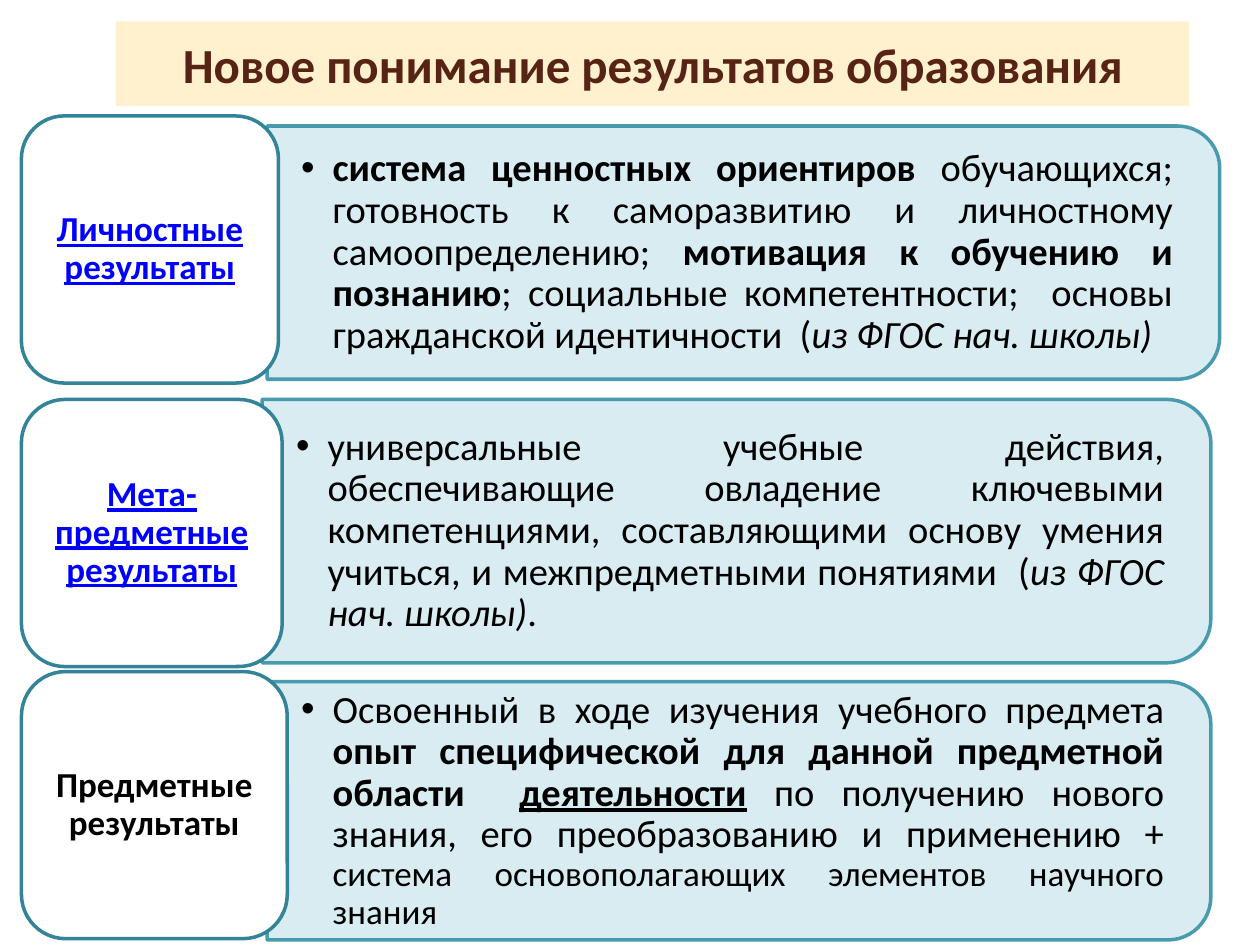
"""Builds a slide that pairs three kinds of learning results with their descriptions."""
from dataclasses import dataclass

from lxml import etree
from pptx import Presentation
from pptx import util as u
from pptx.dml.color import RGBColor
from pptx.enum import shapes, text
from pptx.oxml import ns


@dataclass(frozen=True)
class Theme:
    font: str = "Calibri"
    title_size: int = 28
    body_size: int = 22
    label_size: int = 20
    line_width: int = 2
    title: str = "572314"
    banner: str = "FFF1CE"
    panel: str = "D4EBF1"
    panel_line: str = "3891A7"
    label: str = "FFFFFF"
    label_line: str = "338498"
    ink: str = "000000"
    link: str = "0000FF"


class SlideBuilder:
    columns, rows = 100, 75

    def __init__(self, deck, theme):
        self.deck, self.theme = deck, theme
        self.page = deck.slides.add_slide(deck.slide_layouts[4])
        self.bodies = list(self.page.placeholders)[1:]

    def area(self, left, top, width, height):
        across = self.deck.slide_width / self.columns
        down = self.deck.slide_height / self.rows
        return [u.Emu(round(size * step)) for size, step in
                zip((left, top, width, height), (across, down, across, down))]

    def place(self, box, area):
        box.left, box.top, box.width, box.height = area

    def paint(self, box, fill, line=None):
        box.fill.solid()
        box.fill.fore_color.rgb = RGBColor.from_string(fill)
        if line:
            box.line.color.rgb = RGBColor.from_string(line)
            box.line.width = u.Pt(self.theme.line_width)

    def frame(self, box, side, edge):
        frame = box.text_frame
        frame.word_wrap = True
        frame.auto_size = text.MSO_AUTO_SIZE.NONE
        frame.vertical_anchor = text.MSO_ANCHOR.MIDDLE
        frame.margin_left = frame.margin_right = u.Inches(side)
        frame.margin_top = frame.margin_bottom = u.Inches(edge)
        return frame.paragraphs[0]

    def style(self, para, size, color, bold, align, spacing=0.9):
        para.alignment = align
        para.line_spacing = spacing
        para.space_before = u.Pt(0)
        para.font.name = self.theme.font
        para.font.size = u.Pt(size)
        para.font.bold = bold
        para.font.color.rgb = RGBColor.from_string(color)

    def title(self, words, *area):
        box = self.page.shapes.title
        self.place(box, self.area(*area))
        self.paint(box, self.theme.banner)
        para = self.frame(box, 0.1, 0.05)
        para.text = words
        self.style(para, self.theme.title_size, self.theme.title, True,
                   text.PP_ALIGN.CENTER, 1.0)

    def panel(self, *area):
        left, top, width, height = self.area(*area)
        shift = (width - height) // 2
        box = self.page.shapes.add_shape(
            shapes.MSO_SHAPE.ROUND_2_SAME_RECTANGLE,
            left + shift, top - shift, height, width)
        box.rotation = 90
        box.shadow.inherit = False
        self.paint(box, self.theme.panel, self.theme.panel_line)
        for color in box._element.spPr.iter(ns.qn("a:srgbClr")):
            etree.SubElement(color, ns.qn("a:alpha"), val="90000")

    def bullet(self, spans, *area):
        box = self.bodies.pop(0)
        self.page.shapes._spTree.append(box._element)
        self.place(box, self.area(*area))
        para = self.frame(box, 0.27, 0.14)
        self.style(para, self.theme.body_size, self.theme.ink, False, text.PP_ALIGN.JUSTIFY)
        props = para._p.get_or_add_pPr()
        props.set("marL", str(u.Inches(0.25)))
        props.set("indent", str(-u.Inches(0.25)))
        mark = etree.Element(ns.qn("a:buChar"), char="•")
        props.find(ns.qn("a:defRPr")).addprevious(mark)
        for words, marks in spans:
            span = para.add_run()
            span.text = words
            span.font.bold = "b" in marks
            span.font.italic = "i" in marks
            span.font.underline = "u" in marks
            span.font.name = self.theme.font
            span.font.size = u.Pt(self.theme.label_size if "s" in marks
                                  else self.theme.body_size)
            span.font.color.rgb = RGBColor.from_string(self.theme.ink)

    def label(self, words, linked, *area):
        box = self.page.shapes.add_shape(
            shapes.MSO_SHAPE.ROUNDED_RECTANGLE, *self.area(*area))
        box.shadow.inherit = False
        self.paint(box, self.theme.label, self.theme.label_line)
        para = self.frame(box, 0.08, 0.04)
        para.text = words
        color = self.theme.link if linked else self.theme.ink
        self.style(para, self.theme.label_size, color, True, text.PP_ALIGN.CENTER)
        para.font.underline = linked

    def finish(self):
        for box in self.bodies:
            box._element.getparent().remove(box._element)


RESULTS = [
    ("Личностные результаты", True, (1.7, 9.2, 20.4, 21.2), (21.2, 10, 75.6, 20.1), [
        ("система ценностных ориентиров ", "b"),
        ("обучающихся; готовность к саморазвитию и личностному самоопределению; ", ""),
        ("мотивация к обучению и познанию", "b"),
        ("; социальные компетентности;  основы гражданской идентичности  (", ""),
        ("из ФГОС нач. школы)", "i")]),
    ("Мета-предметные результаты", True, (1.7, 31.7, 20.7, 21.2), (20.8, 31.7, 75.3, 20.9), [
        ("универсальные учебные действия, обеспечивающие овладение ключевыми "
         "компетенциями, составляющими основу умения учиться, и межпредметными "
         "понятиями  (", ""),
        ("из ФГОС нач. школы)", "i"),
        (".", "")]),
    ("Предметные результаты", False, (1.7, 53.3, 21.1, 21.2), (21.2, 54.1, 74.9, 20.5), [
        ("Освоенный в ходе изучения учебного предмета ", ""),
        ("опыт специфической для данной предметной области  ", "b"),
        ("деятельности", "bu"),
        (" ", "b"),
        ("по получению нового знания, его преобразованию и применению + ", ""),
        ("система основополагающих элементов научного знания", "s")]),
]


def main():
    deck = Presentation()
    deck.slide_width, deck.slide_height = u.Inches(10), u.Inches(7.5)
    slide = SlideBuilder(deck, Theme())
    slide.title("Новое понимание результатов образования", 9.2, 1.7, 85.2, 6.7)
    for name, linked, label_area, panel_area, spans in RESULTS:
        left, top, width, height = panel_area
        slide.panel(*panel_area)
        slide.bullet(spans, left, top + 1, width - 1, height - 2)
        slide.label(name, linked, *label_area)
    slide.finish()
    deck.save("out.pptx")


if __name__ == "__main__":
    main()
